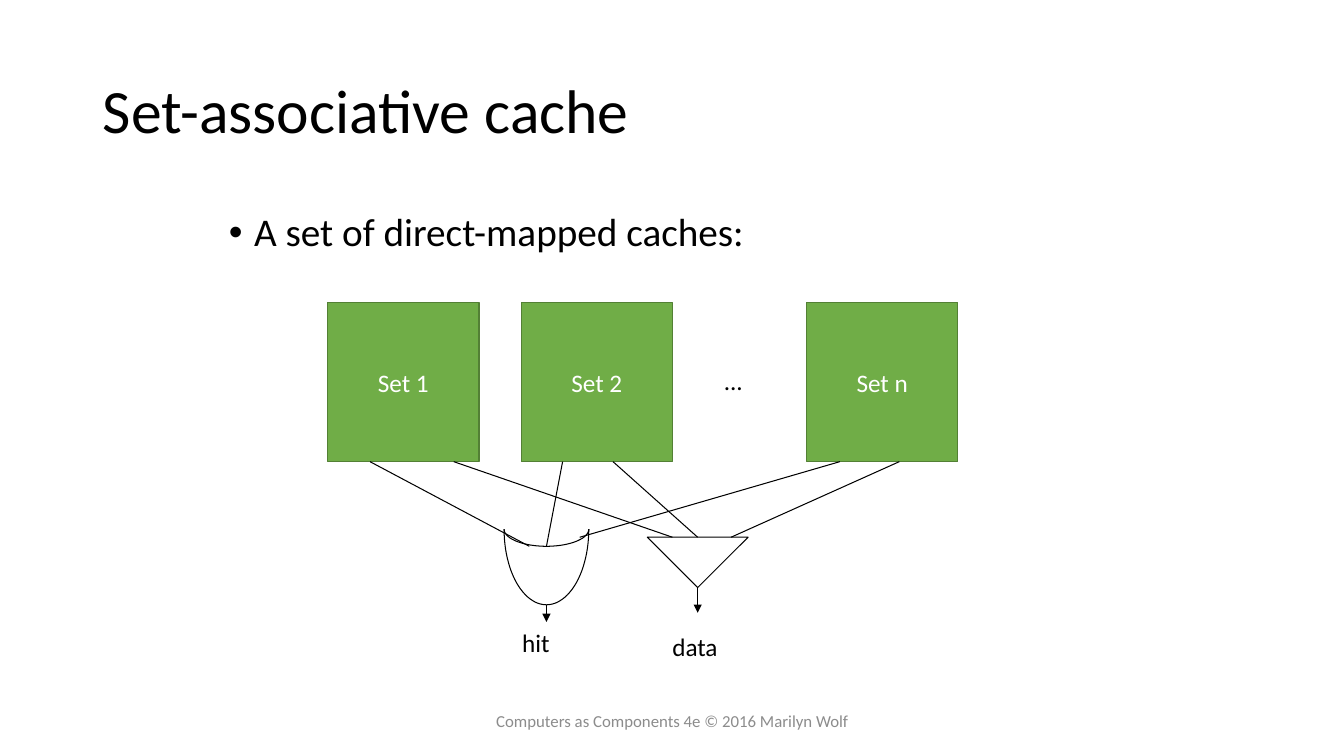
import math
from dataclasses import dataclass

from lxml import etree
from pptx import Presentation
from pptx.dml.color import RGBColor
from pptx.enum import shapes, text
from pptx.oxml.ns import qn
from pptx.util import Inches, Pt

TITLE = ("Set-associative cache", (0.92, 0.4, 11.5, 1.45))
BULLET = ("A set of direct-mapped caches:", (2.17, 2.06, 8.94, 0.69))
FOOTER = ("Computers as Components 4e © 2016 Marilyn Wolf", (4.42, 6.95, 4.5, 0.4))
LABELS = [
    ("...", (7.08, 3.58, 0.39, 0.4)),
    ("hit", (5.08, 6.17, 0.48, 0.4)),
    ("data", (6.57, 6.21, 0.66, 0.4)),
]
CACHE_SETS = {"Set 1": 3.25, "Set 2": 5.17, "Set n": 8}
SET_TOP, SET_WIDTH, SET_HEIGHT = 3, 1.5, 1.58
SET_BOTTOM = SET_TOP + SET_HEIGHT

GATE_X, GATE_Y, GATE_RADIUS = 5.42, 5.25, 0.42
GATE_DEPTHS = (0.75, 0.17)
MULTIPLEXER = (6.42, 5.33, 1, 0.5)

# x on the set's lower edge, then the end point at the gate or multiplexer
INPUTS = [
    (3.67, 5.25, 5.42), (5.58, 5.42, 5.42), (8.33, 5.75, 5.33),
    (4.5, 6.67, 5.33), (6.08, 6.92, 5.33), (8.92, 7.25, 5.33),
]
# x, start y, end y
OUTPUTS = [(5.42, 6, 6.17), (6.92, 5.83, 6.08)]


@dataclass(frozen=True)
class Theme:
    font: str = "Calibri"
    ink: str = "000000"
    paper: str = "FFFFFF"
    set_fill: str = "70AD47"
    set_line: str = "538035"
    muted: str = "8C8C8C"
    title_size: int = 44
    bullet_size: int = 28
    label_size: int = 18
    footer_size: int = 12
    thin: float = 0.75


THEME = Theme()


def color(value):
    return RGBColor.from_string(value)


def write(shape, words, size, ink, frame_format=None, paragraph_format=None):
    frame = shape.text_frame
    frame.text = words
    paragraph = frame.paragraphs[0]
    font = paragraph.runs[0].font
    font.color.rgb = color(ink)
    formats = [
        (frame, frame_format or {}),
        (paragraph, paragraph_format or {}),
        (font, {"name": THEME.font, "size": Pt(size)}),
    ]
    for target, values in formats:
        for name, value in values.items():
            setattr(target, name, value)


def place(shape, box):
    for name, value in zip(("left", "top", "width", "height"), box):
        setattr(shape, name, Inches(value))


def outline(shape, line_color=THEME.ink, width=THEME.thin):
    shape.line.color.rgb = color(line_color)
    shape.line.width = Pt(width)


def add_block(slide, kind, box, fill):
    shape = slide.shapes.add_shape(kind, *map(Inches, box))
    shape.shadow.inherit = False
    shape.fill.solid()
    shape.fill.fore_color.rgb = color(fill)
    outline(shape)
    return shape


def add_line(slide, start, end, arrow=False):
    line = slide.shapes.add_connector(
        shapes.MSO_CONNECTOR.STRAIGHT, *map(Inches, (*start, *end)))
    outline(line)
    properties = line._element.spPr
    if arrow:
        etree.SubElement(properties.find(qn("a:ln")), qn("a:tailEnd"), type="triangle")
    etree.SubElement(properties, qn("a:effectLst"))


def add_gate_curve(slide, depth, steps=48):
    """Draw the lower half of an ellipse hanging from the gate's top corners."""
    points = [
        (Inches(GATE_X + GATE_RADIUS * math.cos(math.pi * step / steps)),
         Inches(GATE_Y + depth * math.sin(math.pi * step / steps)))
        for step in range(steps + 1)
    ]
    builder = slide.shapes.build_freeform(*points[0])
    builder.add_line_segments(points[1:], close=False)
    curve = builder.convert_to_shape()
    curve.shadow.inherit = False
    curve.fill.background()
    outline(curve)


def add_headings(slide):
    title, body = slide.shapes.title, slide.placeholders[1]
    middle = text.MSO_ANCHOR.MIDDLE
    fixed = text.MSO_AUTO_SIZE.NONE
    left = text.PP_ALIGN.LEFT
    place(title, TITLE[1])
    write(title, TITLE[0], THEME.title_size, THEME.ink,
          {"vertical_anchor": middle, "auto_size": fixed},
          {"alignment": left, "line_spacing": 0.9})
    place(body, BULLET[1])
    write(body, BULLET[0], THEME.bullet_size, THEME.ink, {"auto_size": fixed},
          {"line_spacing": 0.9, "space_before": Pt(10)})
    properties = body.text_frame.paragraphs[0]._p.get_or_add_pPr()
    properties.set("marL", str(Inches(0.25)))
    properties.set("indent", str(Inches(-0.25)))
    etree.SubElement(properties, qn("a:buChar"), char="•")


def add_diagram(slide):
    centred = {"alignment": text.PP_ALIGN.CENTER}
    middle = text.MSO_ANCHOR.MIDDLE
    for name, left in CACHE_SETS.items():
        block = add_block(slide, shapes.MSO_SHAPE.RECTANGLE,
                          (left, SET_TOP, SET_WIDTH, SET_HEIGHT), THEME.set_fill)
        outline(block, THEME.set_line, 1)
        write(block, name, THEME.label_size, THEME.paper,
              {"vertical_anchor": middle, "word_wrap": False}, centred)

    multiplexer = add_block(slide, shapes.MSO_SHAPE.ISOSCELES_TRIANGLE,
                            MULTIPLEXER, THEME.paper)
    multiplexer._element.spPr.get_or_add_xfrm().set("flipV", "1")
    for depth in GATE_DEPTHS:
        add_gate_curve(slide, depth)

    for start_x, end_x, end_y in INPUTS:
        add_line(slide, (start_x, SET_BOTTOM), (end_x, end_y))
    for x, start_y, end_y in OUTPUTS:
        add_line(slide, (x, start_y), (x, end_y), arrow=True)

    for words, box in LABELS:
        label = slide.shapes.add_textbox(*map(Inches, box))
        write(label, words, THEME.label_size, THEME.ink,
              {"word_wrap": False, "auto_size": text.MSO_AUTO_SIZE.SHAPE_TO_FIT_TEXT})
    footer = slide.shapes.add_textbox(*map(Inches, FOOTER[1]))
    write(footer, FOOTER[0], THEME.footer_size, THEME.muted,
          {"word_wrap": True, "vertical_anchor": middle}, centred)


def main():
    presentation = Presentation()
    presentation.slide_width = Inches(13.33)
    presentation.slide_height = Inches(7.5)
    slide = presentation.slides.add_slide(presentation.slide_layouts[1])
    add_headings(slide)
    add_diagram(slide)
    presentation.save("out.pptx")


if __name__ == "__main__":
    main()
